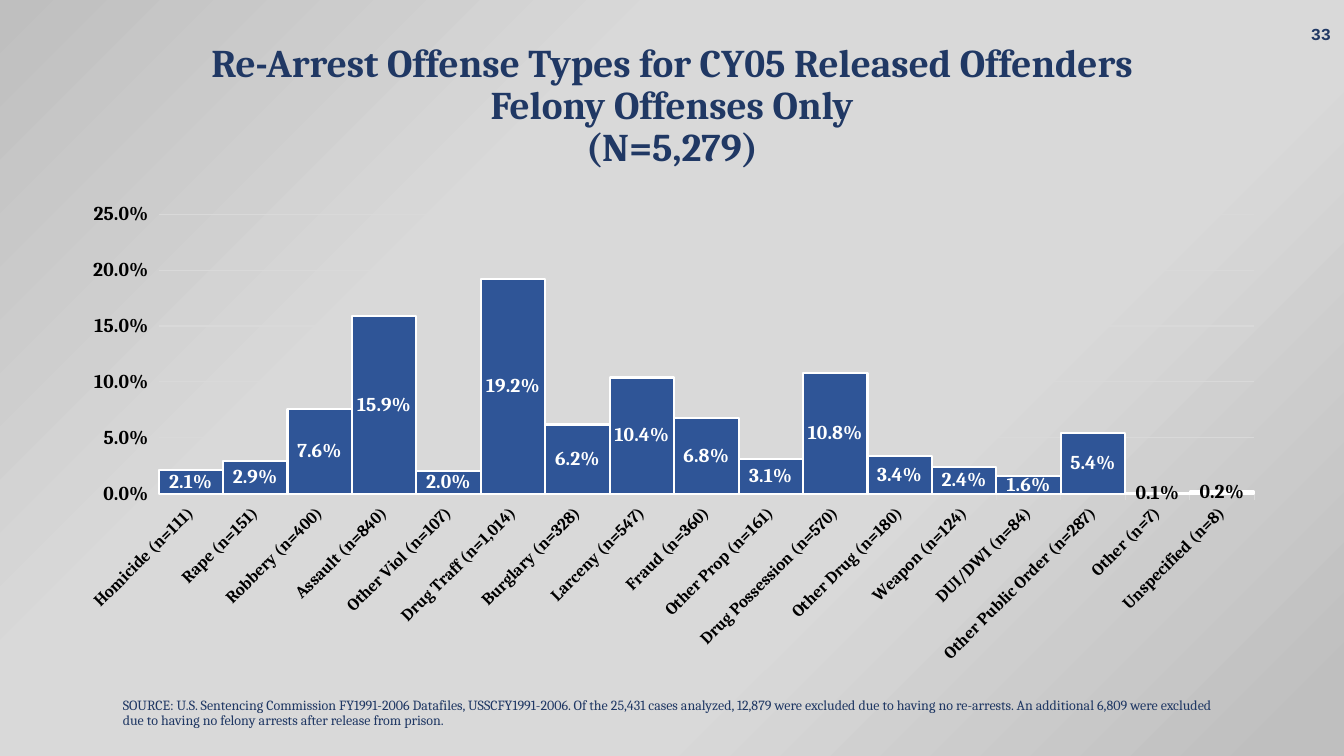
from dataclasses import dataclass

from lxml import etree
from pptx import Presentation
from pptx import util as u
from pptx.chart.data import CategoryChartData
from pptx.dml.color import RGBColor
from pptx.enum import chart as charts, text
from pptx.oxml import parse_xml
from pptx.oxml.ns import nsdecls, qn


@dataclass
class Theme:
    navy: str = "203864"
    bar: str = "2F5597"
    white: str = "FFFFFF"
    black: str = "000000"
    grid: str = "D9D9D9"
    backdrop: tuple = ((0, "BFBFBF"), (33, "D9D9D9"), (66, "D9D9D9"), (97, "BFBFBF"))
    serif: str = "Cambria"
    mono: str = "Courier New"
    title_size: int = 28
    value_size: int = 14
    label_size: int = 12
    note_size: int = 10


theme = Theme()


def style_font(font, size, color, bold=True, name=theme.serif):
    font.name = name
    font.size = u.Pt(size)
    font.bold = bold
    font.color.rgb = RGBColor.from_string(color)


def add_text(slide, box, lines, size, align, anchor, bold=True, name=theme.serif):
    shape = slide.shapes.add_textbox(*[u.Inches(length) for length in box])
    frame = shape.text_frame
    frame.word_wrap = True
    frame.vertical_anchor = anchor
    paragraph = frame.paragraphs[0]
    paragraph.alignment = align
    paragraph.line_spacing = 0.9
    for index, line in enumerate(lines):
        if index:
            paragraph.add_line_break()
        run = paragraph.add_run()
        run.text = line
        style_font(run.font, size, theme.navy, bold, name)


presentation = Presentation()
presentation.slide_width = u.Inches(13.33)
presentation.slide_height = u.Inches(7.5)
slide = presentation.slides.add_slide(presentation.slide_layouts[6])

# Diagonal grey background
fill = slide.background.fill
fill.gradient()
fill.gradient_angle = 315
stops = slide.background._cSld.find(".//" + qn("a:gsLst"))
for stop in list(stops):
    stops.remove(stop)
for percent, color in theme.backdrop:
    stop = etree.SubElement(stops, qn("a:gs"), pos=str(percent * 1000))
    etree.SubElement(stop, qn("a:srgbClr"), val=color)

# Slide number
add_text(slide, (10.3, 0.15, 3, 0.4), ["33"], theme.label_size,
         text.PP_ALIGN.RIGHT, text.MSO_ANCHOR.MIDDLE, name=theme.mono)

# Chart data
offenses = [
    ("Homicide (n=111)", 0.021),
    ("Rape (n=151)", 0.029),
    ("Robbery (n=400)", 0.076),
    ("Assault (n=840)", 0.159),
    ("Other Viol (n=107)", 0.02),
    ("Drug Traff (n=1,014)", 0.192),
    ("Burglary (n=328)", 0.062),
    ("Larceny (n=547)", 0.104),
    ("Fraud (n=360)", 0.068),
    ("Other Prop (n=161)", 0.031),
    ("Drug Possession (n=570)", 0.108),
    ("Other Drug (n=180)", 0.034),
    ("Weapon (n=124)", 0.024),
    ("DUI/DWI (n=84)", 0.016),
    ("Other Public Order (n=287)", 0.054),
    ("Other (n=7)", 0.001),
    ("Unspecified (n=8)", 0.002),
]
data = CategoryChartData(number_format="0.0%")
data.categories = [offense for offense, share in offenses]
data.add_series("Series 1", [share for offense, share in offenses])

# Column chart
chart = slide.shapes.add_chart(
    charts.XL_CHART_TYPE.COLUMN_CLUSTERED, u.Inches(0.66), u.Inches(1.92),
    u.Inches(12.02), u.Inches(4.76), data).chart
chart.has_legend = False
chart.has_title = False
style_font(chart.font, theme.note_size, theme.black, bold=False)

plot = chart.plots[0]
plot.gap_width = 0
plot.vary_by_categories = False
series = plot.series[0]
series.format.fill.solid()
series.format.fill.fore_color.rgb = RGBColor.from_string(theme.bar)
series.format.line.color.rgb = RGBColor.from_string(theme.white)
series.format.line.width = u.Pt(1.5)

# Data labels: white inside the columns, black where a column is too short
labels = series.data_labels
labels.show_value = True
labels.number_format = "0.0%"
labels.number_format_is_linked = False
labels.position = charts.XL_LABEL_POSITION.CENTER
style_font(labels.font, theme.value_size, theme.white)
for index, (offense, share) in enumerate(offenses):
    if share < 0.01:
        label = series.points[index].data_label
        style_font(label.font, theme.value_size, theme.black)
        label.position = charts.XL_LABEL_POSITION.CENTER

# Axes
category_axis = chart.category_axis
style_font(category_axis.tick_labels.font, theme.label_size, theme.black)
category_axis.format.line.color.rgb = RGBColor.from_string(theme.grid)
category_axis.format.line.width = u.Pt(0.75)
category_axis._element.find(".//" + qn("a:bodyPr")).set("rot", "-2700000")

value_axis = chart.value_axis
value_axis.minimum_scale = 0
value_axis.maximum_scale = 0.25
value_axis.major_unit = 0.05
value_axis.tick_labels.number_format = "0.0%"
value_axis.tick_labels.number_format_is_linked = False
style_font(value_axis.tick_labels.font, theme.value_size, theme.black)
value_axis.format.line.fill.background()
gridline = value_axis.major_gridlines.format.line
gridline.color.rgb = RGBColor.from_string(theme.grid)
gridline.width = u.Pt(0.75)

# Plot area position, as shares of the chart frame
plot_area = chart._chartSpace.find(".//" + qn("c:plotArea"))
for layout in plot_area.findall(qn("c:layout")):
    plot_area.remove(layout)
layout = parse_xml(f"<c:layout {nsdecls('c')}><c:manualLayout/></c:layout>")
for tag, value in (("layoutTarget", "inner"), ("xMode", "edge"), ("yMode", "edge"),
                   ("x", "0.076"), ("y", "0.043"), ("w", "0.904"), ("h", "0.583")):
    etree.SubElement(layout[0], qn("c:" + tag), val=value)
plot_area.insert(0, layout)

# Title
add_text(slide, (0, 0.4, 13.33, 1.32),
         ["Re-Arrest Offense Types for CY05 Released Offenders",
          "Felony Offenses Only", "(N=5,279)"],
         theme.title_size, text.PP_ALIGN.CENTER, text.MSO_ANCHOR.MIDDLE)

# Source note
add_text(slide, (1.12, 6.88, 11.1, 0.75),
         ["SOURCE: U.S. Sentencing Commission FY1991-2006 Datafiles, USSCFY1991-2006. "
          "Of the 25,431 cases analyzed, 12,879 were excluded due to having no re-arrests. "
          "An additional 6,809 were excluded due to having no felony arrests after release "
          "from prison."],
         theme.note_size, text.PP_ALIGN.LEFT, text.MSO_ANCHOR.TOP, bold=False)

presentation.save("out.pptx")
